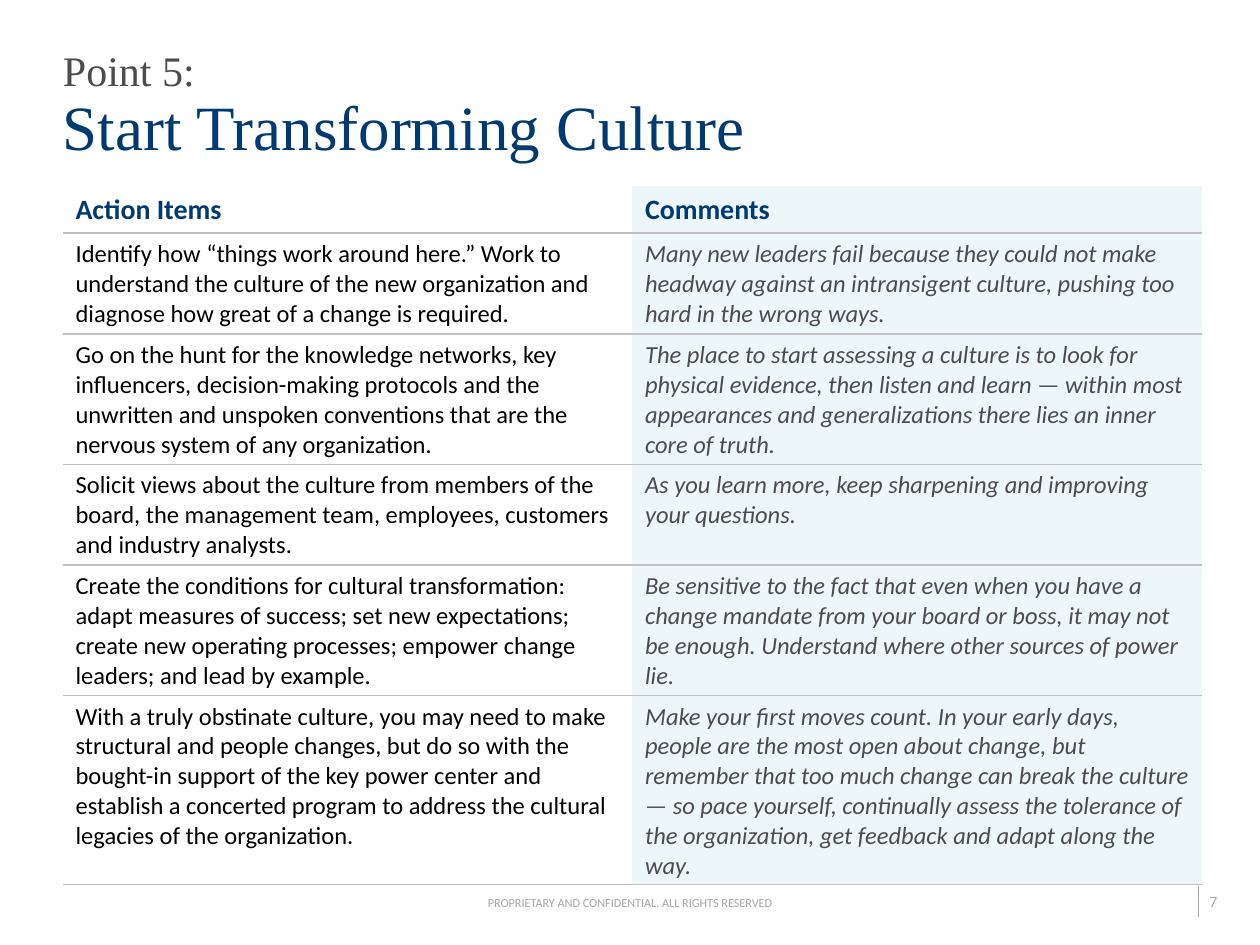
from dataclasses import dataclass

from lxml.etree import SubElement
from pptx import Presentation
from pptx.dml.color import RGBColor
from pptx.enum.shapes import MSO_CONNECTOR
from pptx.enum.text import MSO_ANCHOR, PP_ALIGN
from pptx.oxml.ns import qn
from pptx.slide import Slide
from pptx.table import _Cell
from pptx.text.text import Font, TextFrame
from pptx.util import Pt

COLORS = {
    "navy": "003A70",
    "gray": "4C4C4E",
    "black": "000000",
    "footer": "A6A6A6",
    "divider": "A8A3AB",
    "rule": "BFBFBF",
    "tint": "EDF6F8",
}
SANS, SERIF = "Calibri", "Times New Roman"


@dataclass
class Style:
    """Character formatting of a run."""
    size: float
    color: str
    name: str = SANS
    bold: bool = False
    italic: bool = False


@dataclass
class Box:
    """Text box frame, insets (left, top, right, bottom) and layout."""
    left: float
    top: float
    width: float
    height: float
    insets: tuple[float, float, float, float]
    anchor: MSO_ANCHOR = MSO_ANCHOR.TOP
    align: PP_ALIGN = PP_ALIGN.LEFT
    wrap: bool = False


@dataclass
class Row:
    """One action item with its comment."""
    height: float
    action: str
    comment: str


HEADER = Style(16, "navy", bold=True)
ACTION = Style(14, "black")
COMMENT = Style(14, "gray", italic=True)
FOOTER = Style(7, "footer")
NUMBER = Style(9, "footer")
KICKER = Style(24, "gray", SERIF)
HEADLINE = Style(36, "navy", SERIF)

ROWS = [
    Row(26.64, "Action Items", "Comments"),
    Row(36.72,
        "Identify how “things work around here.” Work to understand the culture of the new "
        "organization and diagnose how great of a change is required.",
        "Many new leaders fail because they could not make headway against an intransigent "
        "culture, pushing too hard in the wrong ways."),
    Row(46.8,
        "Go on the hunt for the knowledge networks, key influencers, decision-making protocols "
        "and the unwritten and unspoken conventions that are the nervous system of any "
        "organization.",
        "The place to start assessing a culture is to look for physical evidence, then listen "
        "and learn — within most appearances and generalizations there lies an inner core of "
        "truth."),
    Row(37.44,
        "Solicit views about the culture from members of the board, the management team, "
        "employees, customers and industry analysts.",
        "As you learn more, keep sharpening and improving your questions."),
    Row(36.72,
        "Create the conditions for cultural transformation: adapt measures of success; set new "
        "expectations; create new operating processes; empower change leaders; and lead by "
        "example.",
        "Be sensitive to the fact that even when you have a change mandate from your board or "
        "boss, it may not be enough. Understand where other sources of power lie."),
    Row(57.6,
        "With a truly obstinate culture, you may need to make structural and people changes, "
        "but do so with the bought-in support of the key power center and establish a "
        "concerted program to address the cultural legacies of the organization.",
        "Make your first moves count. In your early days, people are the most open about "
        "change, but remember that too much change can break the culture — so pace yourself, "
        "continually assess the tolerance of the organization, get feedback and adapt along "
        "the way."),
]


def rgb(key: str) -> RGBColor:
    """Return a named colour."""
    return RGBColor.from_string(COLORS[key])


def set_font(font: Font, style: Style) -> None:
    """Apply a style to a font."""
    font.name, font.size = style.name, Pt(style.size)
    font.bold, font.italic = style.bold, style.italic
    font.color.rgb = rgb(style.color)


def add_text(s: Slide, box: Box, text: str, style: Style) -> TextFrame:
    """Add a one-paragraph text box."""
    sp = s.shapes.add_textbox(Pt(box.left), Pt(box.top), Pt(box.width), Pt(box.height))
    tf = sp.text_frame
    tf.margin_left, tf.margin_top, tf.margin_right, tf.margin_bottom = map(Pt, box.insets)
    tf.word_wrap, tf.vertical_anchor = box.wrap, box.anchor
    tf.text = text
    p = tf.paragraphs[0]
    p.alignment = box.align
    set_font(p.runs[0].font, style)
    return tf


def add_title(s: Slide) -> None:
    """Add the two-line title."""
    box = Box(36, 18, 648, 79.2, (0, 3.6, 0, 3.6), MSO_ANCHOR.BOTTOM, wrap=True)
    p = add_text(s, box, "Point 5:", KICKER).paragraphs[0]
    p.line_spacing = 0.9
    p.add_line_break()
    r = p.add_run()
    r.text = "Start Transforming Culture"
    set_font(r.font, HEADLINE)


def set_borders(cell: _Cell, ruled: str) -> None:
    """Rule the given sides of a cell and clear the others."""
    tcPr = cell._tc.get_or_add_tcPr()
    for side in "LRTB":
        ln = SubElement(tcPr, qn(f"a:ln{side}"), w=str(Pt(1)))
        if side in ruled:
            fill = SubElement(ln, qn("a:solidFill"))
            SubElement(fill, qn("a:srgbClr"), val=COLORS["rule"])
        else:
            SubElement(ln, qn("a:noFill"))


def fill_cell(cell: _Cell, text: str, style: Style, header: bool, tinted: bool) -> None:
    """Write and format one table cell."""
    cell.text = text
    set_font(cell.text_frame.paragraphs[0].runs[0].font, style)
    cell.vertical_anchor = MSO_ANCHOR.MIDDLE if header else MSO_ANCHOR.TOP
    set_borders(cell, "B" if header else "TB")
    if tinted:
        cell.fill.solid()
        cell.fill.fore_color.rgb = rgb("tint")
    else:
        cell.fill.background()


def add_actions(s: Slide, rows: list[Row]) -> None:
    """Add the table of action items and comments."""
    height = Pt(381.6)
    sp = s.shapes.add_table(len(rows), 2, Pt(36), Pt(106.56), Pt(650.88), height)
    table = sp.table
    table.first_row = table.horz_banding = False
    for i, row in enumerate(rows):
        table.rows[i].height = Pt(row.height)
        header = i == 0
        fill_cell(table.cell(i, 0), row.action, HEADER if header else ACTION, header, False)
        fill_cell(table.cell(i, 1), row.comment, HEADER if header else COMMENT, header, True)
    sp.height = height


def add_footer(s: Slide) -> None:
    """Add the page number, its divider and the confidentiality line."""
    add_text(s, Box(684, 506.16, 28.8, 18, (7.2, 3.6, 0, 3.6)), "7", NUMBER)
    x, y = Pt(684.72), Pt(506.16)
    line = s.shapes.add_connector(MSO_CONNECTOR.STRAIGHT, x, y, x, y + Pt(18))
    line.line.color.rgb = rgb("divider")
    line.line.width = Pt(0.5)
    SubElement(line._element.spPr, qn("a:effectLst"))
    box = Box(277.92, 511.2, 164.16, 8.64, (0, 0, 0, 0), MSO_ANCHOR.MIDDLE, PP_ALIGN.CENTER)
    add_text(s, box, "PROPRIETARY AND CONFIDENTIAL. ALL RIGHTS RESERVED", FOOTER)


def main() -> None:
    """Build and save the slide."""
    prs = Presentation()
    prs.slide_width, prs.slide_height = Pt(720), Pt(540)
    s = prs.slides.add_slide(prs.slide_layouts[6])
    add_footer(s)
    add_title(s)
    add_actions(s, ROWS)
    prs.save("out.pptx")


if __name__ == "__main__":
    main()
